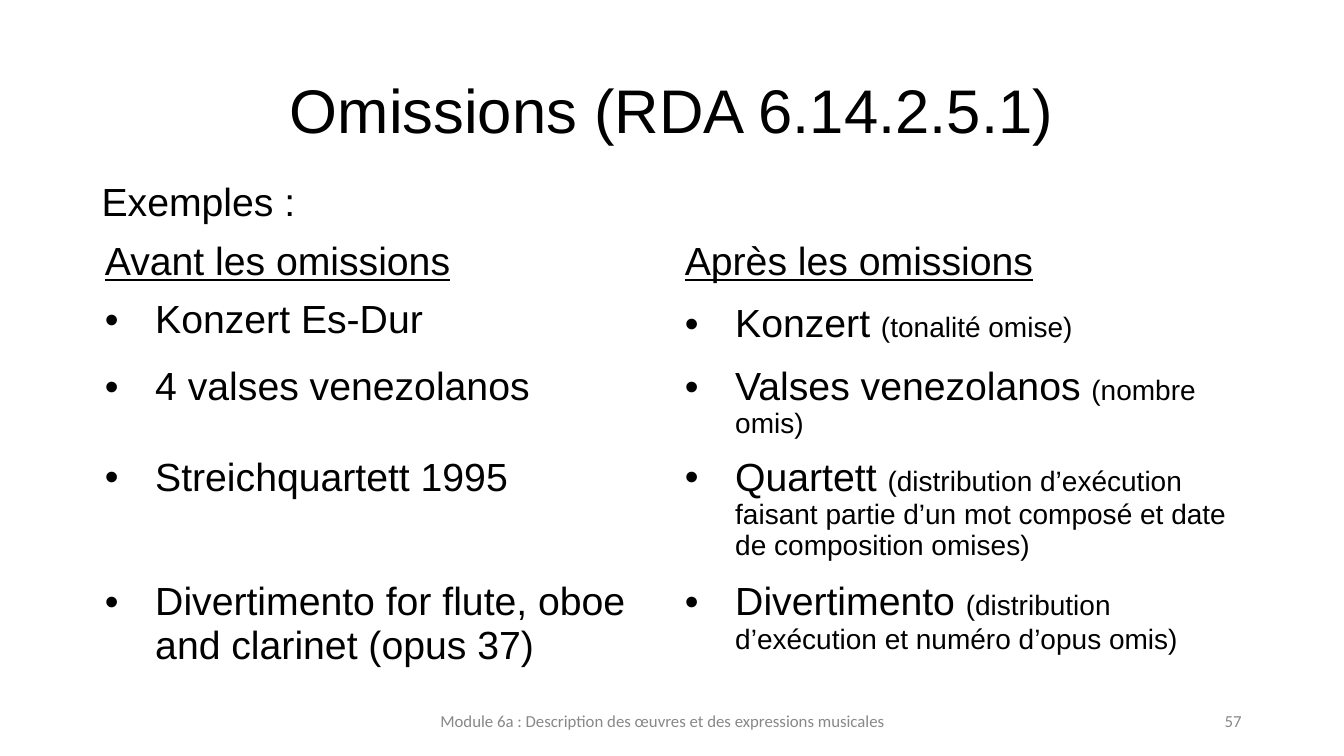
from lxml import etree
from pptx import Presentation
from pptx.dml.color import RGBColor
from pptx.enum.text import MSO_ANCHOR, PP_ALIGN
from pptx.oxml.ns import qn
from pptx.util import Pt

BLACK, GREY = "000000", "888888"


def add_run(p, text, size, color=BLACK, **fmt):
    r = p.add_run()
    r.text = text
    r.font.color.rgb = RGBColor.from_string(color)
    for name, value in {"size": Pt(size), "name": "Arial", **fmt}.items():
        setattr(r.font, name, value)


def add_bullet(p):
    pPr = p._p.get_or_add_pPr()
    pPr.set("marL", str(Pt(36)))
    pPr.set("indent", str(-Pt(36)))
    etree.SubElement(pPr, qn("a:buFont"), typeface="Arial")
    etree.SubElement(pPr, qn("a:buChar"), char="•")


prs = Presentation()
prs.slide_width, prs.slide_height = Pt(960), Pt(540)
s = prs.slides.add_slide(prs.slide_layouts[5])

# Title
title = s.shapes.title
title.left, title.top, title.width, title.height = Pt(66), Pt(28.8), Pt(828), Pt(104.4)
tf = title.text_frame
tf.vertical_anchor = MSO_ANCHOR.MIDDLE
p = tf.paragraphs[0]
p.alignment, p.line_spacing = PP_ALIGN.CENTER, 0.9
add_run(p, "Omissions (RDA 6.14.2.5.1)", 44)

# Introduction, footer and page number
small = {"size": 12, "color": GREY, "name": "Calibri"}
labels = [
    ("Exemples :", (65.5, 123.1, 396, 41), PP_ALIGN.LEFT, MSO_ANCHOR.TOP, {"size": 28}),
    ("Module 6a : Description des œuvres et des expressions musicales",
     (305.3, 500.4, 336.2, 28.8), PP_ALIGN.CENTER, MSO_ANCHOR.MIDDLE, small),
    ("57", (678, 500.4, 216, 28.8), PP_ALIGN.RIGHT, MSO_ANCHOR.MIDDLE, small),
]
for text, box, align, anchor, fmt in labels:
    tf = s.shapes.add_textbox(*map(Pt, box)).text_frame
    tf.word_wrap = True
    tf.vertical_anchor = anchor
    p = tf.paragraphs[0]
    p.alignment = align
    add_run(p, text, **fmt)

# Titles before and after the omissions: (before, after, reason)
examples = [
    ("Konzert Es-Dur", "Konzert ", "(tonalité omise)"),
    ("4 valses venezolanos", "Valses venezolanos ", "(nombre omis)"),
    ("Streichquartett 1995 ", "Quartett ",
     "(distribution d’exécution faisant partie d’un mot composé et date de composition omises)"),
    ("Divertimento for flute, oboe and clarinet (opus 37) ", "Divertimento ",
     "(distribution d’exécution et numéro d’opus omis)"),
]
heights = [44.6, 44.6, 44.6, 87.8, 95.8]
table = s.shapes.add_table(len(heights), 2, Pt(67.7), Pt(167.8), Pt(828.6), Pt(sum(heights))).table
table.first_row = table.horz_banding = False
for row, height in zip(table.rows, heights):
    row.height = Pt(height)
for cell in table.iter_cells():
    cell.fill.background()

for col, heading in enumerate(["Avant les omissions", "Après les omissions"]):
    add_run(table.cell(0, col).text_frame.paragraphs[0], heading, 28, underline=True)

for row, (before, after, reason) in enumerate(examples, 1):
    for col, text in enumerate([before, after]):
        p = table.cell(row, col).text_frame.paragraphs[0]
        if (row, col) == (1, 0):
            p.line_spacing, p.space_before = 0.9, Pt(10)
        add_bullet(p)
        add_run(p, text, 28)
    add_run(p, reason, 20)

prs.save("out.pptx")
